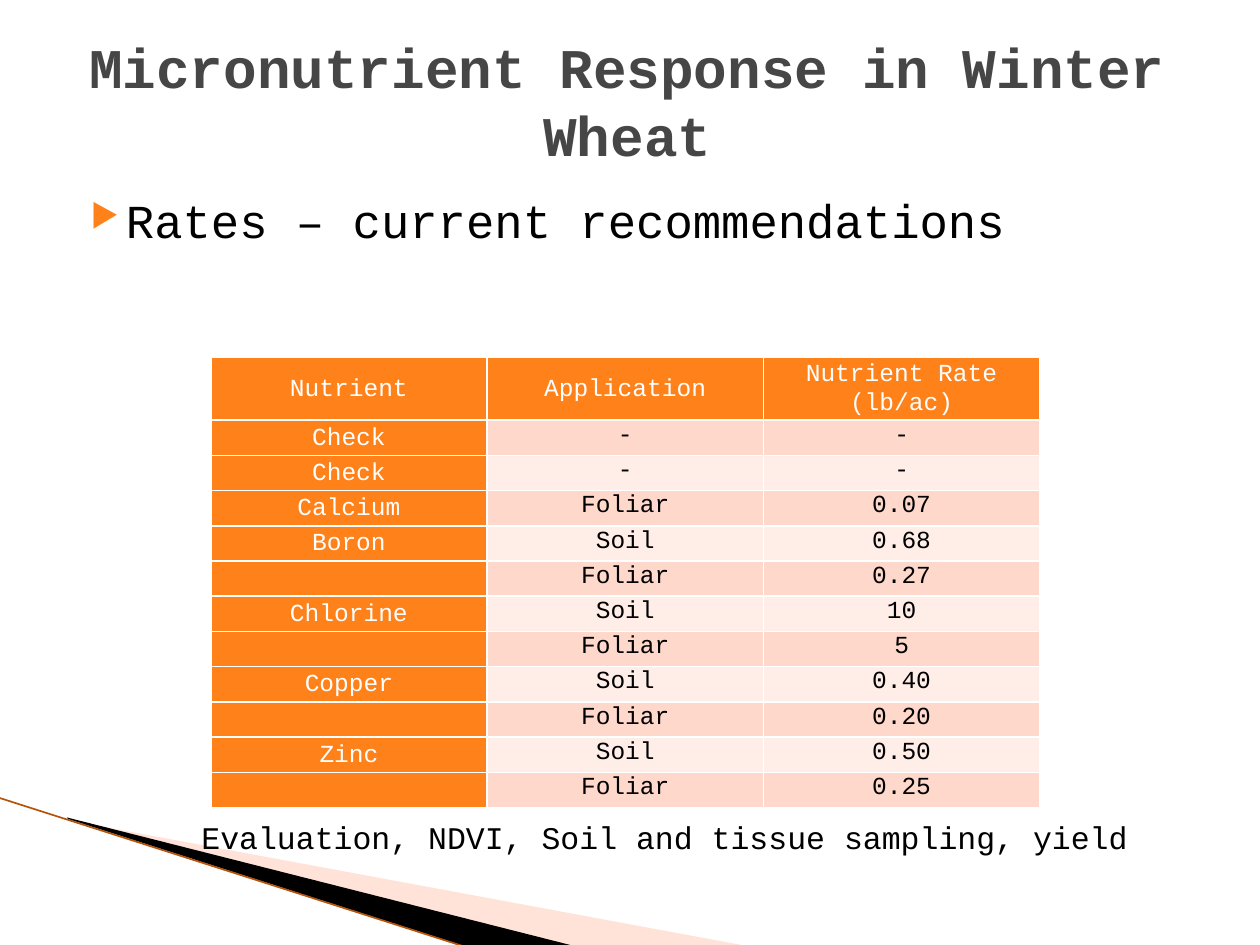
from dataclasses import dataclass
from typing import NamedTuple

from lxml import etree
from pptx import Presentation
from pptx import util as u
from pptx.dml.color import RGBColor
from pptx.enum import shapes, text
from pptx.oxml.ns import qn


@dataclass(frozen=True)
class Theme:
    font: str = "Courier New"
    heading: str = "464646"
    ink: str = "000000"
    paper: str = "FFFFFF"
    accent: str = "FF8119"
    bands: tuple[str, str] = ("FFD8CC", "FFEDE8")
    wedge: str = "FFBAA2"
    edge: str = "B45309"
    title_size: float = 32
    body_size: float = 27
    note_size: float = 18
    table_size: float = 14


class Box(NamedTuple):
    left: float
    top: float
    width: float
    height: float


class Wedge(NamedTuple):
    points: list[tuple[float, float]]
    color: str
    opacity: int


class Treatment(NamedTuple):
    nutrient: str
    application: str
    rate: str


THEME = Theme()

WEDGES = [
    Wedge([(1.4, 16.54), (15.11, 19.08), (11.58, 19.08), (1.4, 16.51)], THEME.wedge, 40),
    Wedge([(1.35, 16.48), (11.61, 19.08), (9.45, 19.1), (1.37, 16.51)], THEME.ink, 100),
]

HEADER = Treatment("Nutrient", "Application", "Nutrient Rate (lb/ac)")
TREATMENTS = [
    Treatment("Check", "-", "-"),
    Treatment("Check", "-", "-"),
    Treatment("Calcium", "Foliar", "0.07"),
    Treatment("Boron", "Soil", "0.68"),
    Treatment("", "Foliar", "0.27"),
    Treatment("Chlorine", "Soil", "10"),
    Treatment("", "Foliar", "5"),
    Treatment("Copper", "Soil", "0.40"),
    Treatment("", "Foliar", "0.20"),
    Treatment("Zinc", "Soil", "0.50"),
    Treatment("", "Foliar", "0.25"),
]
COLUMN_WIDTH, ROW_HEIGHT = 5.57, 0.71


def rgb(color: str) -> RGBColor:
    return RGBColor.from_string(color)


def style(paragraph, size: float, color: str, bold: bool = False) -> None:
    font = paragraph.font
    font.name, font.size, font.bold = THEME.font, u.Pt(size), bold
    font.color.rgb = rgb(color)


def add_text(slide, box: Box, words: str):
    frame = slide.shapes.add_textbox(*map(u.Cm, box)).text_frame
    frame.word_wrap = True
    frame.text = words
    return frame


def add_bullet(paragraph) -> None:
    props = paragraph._p.get_or_add_pPr()
    props.set("marL", str(u.Cm(1.02)))
    props.set("indent", str(-u.Cm(0.71)))
    color = etree.SubElement(props, qn("a:buClr"))
    etree.SubElement(color, qn("a:srgbClr"), val=THEME.accent)
    etree.SubElement(props, qn("a:buSzPct"), val="68000")
    etree.SubElement(props, qn("a:buChar"), char="▶")


def add_wedge(slide, wedge: Wedge) -> None:
    start, *rest = [(u.Cm(x), u.Cm(y)) for x, y in wedge.points]
    builder = slide.shapes.build_freeform(*start)
    builder.add_line_segments(rest, close=True)
    shape = builder.convert_to_shape()
    shape.shadow.inherit = False
    shape.line.fill.background()
    shape.fill.solid()
    shape.fill.fore_color.rgb = rgb(wedge.color)
    color = shape._element.spPr.find(".//" + qn("a:srgbClr"))
    etree.SubElement(color, qn("a:alpha"), val=str(wedge.opacity * 1000))


def add_edge(slide) -> None:
    edge = slide.shapes.add_connector(
        shapes.MSO_CONNECTOR.STRAIGHT, *map(u.Cm, (-0.03, 16.08, 9.42, 19.1)))
    edge.line.color.rgb = rgb(THEME.edge)
    edge.line.width = u.Pt(0.95)
    etree.SubElement(edge._element.spPr, qn("a:effectLst"))


def fill_cell(cell, words: str, fill: str, color: str, anchor) -> None:
    cell.text = words
    cell.vertical_anchor = anchor
    cell.margin_left = cell.margin_right = u.Cm(0.18)
    cell.margin_top = cell.margin_bottom = 0
    paragraph = cell.text_frame.paragraphs[0]
    paragraph.alignment = text.PP_ALIGN.CENTER
    paragraph.line_spacing = 1.07
    style(paragraph, THEME.table_size, color)
    if not words:  # keeps an empty row at its set height
        etree.SubElement(paragraph._p, qn("a:endParaRPr"), sz=str(THEME.table_size * 100))
    # Borders come before the fill in the cell properties
    props = cell._tc.get_or_add_tcPr()
    for side in "LRTB":
        border = etree.SubElement(props, qn(f"a:ln{side}"), w=str(u.Pt(1)))
        solid = etree.SubElement(border, qn("a:solidFill"))
        etree.SubElement(solid, qn("a:srgbClr"), val=THEME.paper)
    cell.fill.solid()
    cell.fill.fore_color.rgb = rgb(fill)


def add_rates(slide, left: float, top: float) -> None:
    rows = [HEADER, *TREATMENTS]
    box = Box(left, top, COLUMN_WIDTH * len(HEADER), ROW_HEIGHT * len(rows))
    rates = slide.shapes.add_table(len(rows), len(HEADER), *map(u.Cm, box)).table
    for r, row in enumerate(rows):
        for c, words in enumerate(row):
            if r == 0 or c == 0:
                look = THEME.accent, THEME.paper, text.MSO_ANCHOR.MIDDLE
            else:
                look = THEME.bands[(r - 1) % 2], THEME.ink, text.MSO_ANCHOR.TOP
            # The first two treatments and all later ones alternate bands
            fill_cell(rates.cell(r, c), words, *look)


def main() -> None:
    deck = Presentation()
    deck.slide_width, deck.slide_height = u.Cm(25.4), u.Cm(19.05)
    slide = deck.slides.add_slide(deck.slide_layouts[6])

    # Corner decoration
    for wedge in WEDGES:
        add_wedge(slide, wedge)
    add_edge(slide)

    # Title
    title = add_text(slide, Box(1.22, 0.43, 22.86, 3.18),
                     "Micronutrient Response in Winter Wheat")
    title.vertical_anchor = text.MSO_ANCHOR.MIDDLE
    title.paragraphs[0].alignment = text.PP_ALIGN.CENTER
    style(title.paragraphs[0], THEME.title_size, THEME.heading, bold=True)

    # Bulleted statement
    statement = add_text(slide, Box(1.27, 3.61, 22.86, 12.57),
                         "Rates – current recommendations")
    statement.margin_top = u.Cm(0.25)
    add_bullet(statement.paragraphs[0])
    style(statement.paragraphs[0], THEME.body_size, THEME.ink)

    # Rates table
    add_rates(slide, 4.25, 7.2)

    # Closing note
    note = add_text(slide, Box(3.81, 16.36, 20.32, 1.8),
                    "Evaluation, NDVI, Soil and tissue sampling, yield")
    style(note.paragraphs[0], THEME.note_size, THEME.ink)

    deck.save("out.pptx")


if __name__ == "__main__":
    main()
